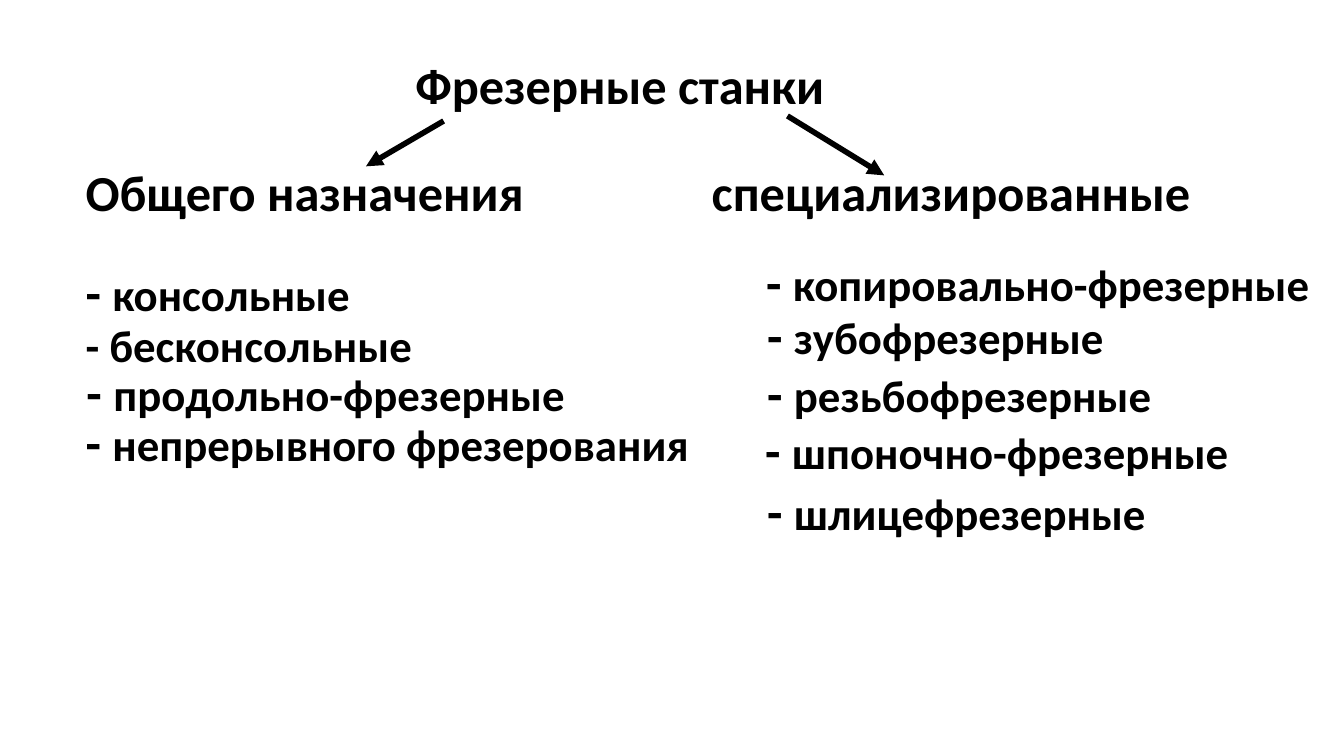
from lxml.etree import SubElement
from pptx import Presentation
from pptx.dml.color import RGBColor
from pptx.enum.shapes import MSO_CONNECTOR
from pptx.enum.text import MSO_ANCHOR, MSO_AUTO_SIZE, PP_ALIGN
from pptx.oxml.ns import qn
from pptx.util import Inches, Pt

BLACK = RGBColor(0x00, 0x00, 0x00)
WHITE = RGBColor(0xFF, 0xFF, 0xFF)
FONT = "Calibri"
HEADING_SIZE, ITEM_SIZE = 36, 32
LINE_HEIGHT = 0.71

# Each item: offset from the column's left and top, dash size, name, width
GENERAL = [
    (0, 0.99, HEADING_SIZE, "консольные", 4.57),
    (0, 1.55, ITEM_SIZE, "бесконсольные", 4.57),
    (0.01, 1.98, HEADING_SIZE, "продольно-фрезерные", 5.76),
    (0, 2.48, HEADING_SIZE, "непрерывного фрезерования", 6.28),
]
SPECIALIZED = [
    (0.92, 0.89, HEADING_SIZE, "копировально-фрезерные", 5.65),
    (0.93, 1.42, HEADING_SIZE, "зубофрезерные", 5.65),
    (0.93, 1.99, HEADING_SIZE, "резьбофрезерные", 5.65),
    (0.91, 2.56, HEADING_SIZE, "шпоночно-фрезерные", 5.65),
    (0.93, 3.16, HEADING_SIZE, "шлицефрезерные", 5.65),
]


def fill_text(holder, runs, align=PP_ALIGN.LEFT):
    """Write (text, size) runs as one bold line."""
    frame = holder.text_frame
    frame.word_wrap = True
    frame.auto_size = MSO_AUTO_SIZE.SHAPE_TO_FIT_TEXT
    frame.vertical_anchor = MSO_ANCHOR.TOP
    line = frame.paragraphs[0]
    line.alignment = align
    for text, size in runs:
        run = line.add_run()
        run.text = text
        run.font.name = FONT
        run.font.size = Pt(size)
        run.font.bold = True
        run.font.color.rgb = BLACK


def add_line(slide, left, top, width, runs, align=PP_ALIGN.LEFT):
    box = slide.shapes.add_textbox(
        Inches(left), Inches(top), Inches(width), Inches(LINE_HEIGHT))
    fill_text(box, runs, align)


def set_title(slide, left, top, width, text):
    title = slide.shapes.title
    title.left, title.top = Inches(left), Inches(top)
    title.width, title.height = Inches(width), Inches(LINE_HEIGHT)
    fill_text(title, [(text, HEADING_SIZE)])


def add_column(slide, left, top, width, heading, items, align=PP_ALIGN.LEFT):
    """Place a group heading and its dashed list below it."""
    add_line(slide, left, top, width, [(heading, HEADING_SIZE)], align)
    for dx, dy, dash_size, name, item_width in items:
        add_line(slide, left + dx, top + dy, item_width,
                 [("- ", dash_size), (name, ITEM_SIZE)])


def add_arrow(slide, start, end):
    arrow = slide.shapes.add_connector(
        MSO_CONNECTOR.STRAIGHT, *(Inches(value) for value in start + end))
    arrow.line.color.rgb = BLACK
    arrow.line.width = Pt(4)
    SubElement(arrow.line._get_or_add_ln(), qn("a:tailEnd"), type="triangle")
    SubElement(arrow._element.spPr, qn("a:effectLst"))


def build_machines_slide(prs):
    slide = prs.slides.add_slide(prs.slide_layouts[5])
    slide.background.fill.solid()
    slide.background.fill.fore_color.rgb = WHITE

    # Root of the classification
    set_title(slide, 4.02, 0.49, 4.57, "Фрезерные станки")

    # Two groups of machines
    add_column(slide, 0.75, 1.55, 4.57, "Общего назначения", GENERAL)
    add_column(slide, 6.58, 1.55, 5.71, "специализированные", SPECIALIZED,
               PP_ALIGN.CENTER)

    # Arrows from the root to the groups
    add_arrow(slide, (4.4, 1.2), (3.63, 1.65))
    add_arrow(slide, (7.81, 1.15), (8.77, 1.74))


def main():
    prs = Presentation()
    prs.slide_width, prs.slide_height = Inches(13.33), Inches(7.5)
    build_machines_slide(prs)
    prs.save("out.pptx")


if __name__ == "__main__":
    main()
